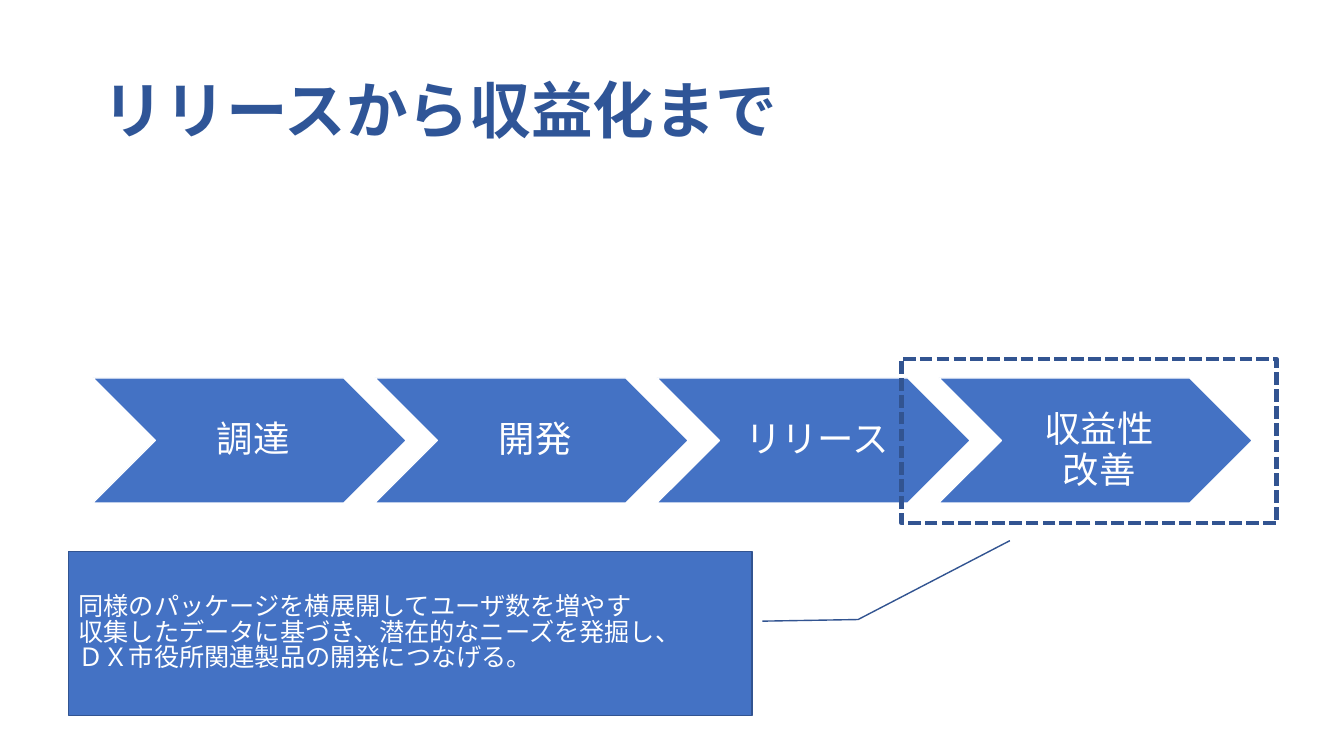
from lxml.etree import SubElement
from pptx import Presentation
from pptx.dml.color import RGBColor
from pptx.enum.dml import MSO_LINE
from pptx.enum.shapes import MSO_SHAPE
from pptx.enum.text import MSO_ANCHOR, PP_ALIGN
from pptx.oxml.ns import qn
from pptx.util import Inches, Pt

FONT = "Noto Sans CJK JP"
WHITE = RGBColor(0xFF, 0xFF, 0xFF)
BLUE = RGBColor(0x44, 0x72, 0xC4)
TITLE_BLUE = RGBColor(0x2F, 0x55, 0x97)
DARK_BLUE = RGBColor(0x32, 0x54, 0x91)


def write_text(text_frame, text, size, color=WHITE, bold=False,
               align=PP_ALIGN.LEFT, line_spacing=None, space_after=0,
               margins=(0.1, 0.05, 0.1, 0.05)):
    """Fill a text frame with one paragraph per line of text."""
    text_frame.word_wrap = True
    text_frame.vertical_anchor = MSO_ANCHOR.MIDDLE
    for side, margin in zip(("left", "top", "right", "bottom"), margins):
        setattr(text_frame, f"margin_{side}", Inches(margin))
    for index, line in enumerate(text.split("\n")):
        paragraph = text_frame.add_paragraph() if index else text_frame.paragraphs[0]
        paragraph.alignment = align
        paragraph.line_spacing = line_spacing
        paragraph.space_after = Pt(space_after)
        run = paragraph.add_run()
        run.text = line
        run.font.name = FONT
        run.font.size = Pt(size)
        run.font.bold = bold
        run.font.color.rgb = color
        # Japanese glyphs take the East Asian typeface
        SubElement(run.font._element, qn("a:ea")).set("typeface", FONT)


class ProcessSlide:
    """Holds the slide and its style."""

    def __init__(self, presentation):
        self.slide = presentation.slides.add_slide(presentation.slide_layouts[5])

    def title(self, text, left, top, width, height):
        title = self.slide.shapes.title
        title.left, title.top = Inches(left), Inches(top)
        title.width, title.height = Inches(width), Inches(height)
        write_text(title.text_frame, text, 44, color=TITLE_BLUE, bold=True,
                   line_spacing=0.9)

    def shape(self, kind, left, top, width, height, fill=None, line=DARK_BLUE,
              line_width=1):
        shape = self.slide.shapes.add_shape(
            kind, Inches(left), Inches(top), Inches(width), Inches(height))
        shape.shadow.inherit = False
        if fill is None:
            shape.fill.background()
        else:
            shape.fill.solid()
            shape.fill.fore_color.rgb = fill
        shape.line.color.rgb = line
        shape.line.width = Pt(line_width)
        return shape

    def step(self, text, left, top, line_spacing=0.9, top_margin=0.04):
        chevron = self.shape(MSO_SHAPE.CHEVRON, left, top, 3.11, 1.24,
                             fill=BLUE, line=WHITE)
        write_text(chevron.text_frame, text, 26, align=PP_ALIGN.CENTER,
                   line_spacing=line_spacing, space_after=9,
                   margins=(0.11, top_margin, 0.04, 0.04))

    def callout(self, text, left, top, width, height, adjustments):
        callout = self.shape(MSO_SHAPE.LINE_CALLOUT_2, left, top, width, height,
                             fill=BLUE)
        for index, value in enumerate(adjustments):
            callout.adjustments[index] = value
        write_text(callout.text_frame, text, 18, line_spacing=0.83)

    def highlight(self, left, top, width, height):
        frame = self.shape(MSO_SHAPE.RECTANGLE, left, top, width, height,
                           line_width=3)
        frame.line.dash_style = MSO_LINE.SQUARE_DOT


def main():
    presentation = Presentation()
    presentation.slide_width = Inches(13.33)
    presentation.slide_height = Inches(7.5)
    page = ProcessSlide(presentation)

    page.title("リリースから収益化まで", 0.92, 0.4, 11.5, 1.45)

    # Process steps
    first_left, pitch, top = 0.92, 2.797, 3.75
    steps = ["調達", "開発", "リリース"]
    for index, name in enumerate(steps):
        page.step(name, first_left + index * pitch, top)
    page.step("収益性\n改善", first_left + len(steps) * pitch, top,
              line_spacing=Pt(20), top_margin=0.35)

    # Explanation of the last step
    page.callout("同様のパッケージを横展開してユーザ数を増やす\n"
                 "収集したデータに基づき、潜在的なニーズを発掘し、\n"
                 "ＤＸ市役所関連製品の開発につなげる。",
                 0.68, 5.47, 6.78, 1.63,
                 (0.425, 1.015, 0.415, 1.155, -0.065, 1.377))
    page.highlight(8.94, 3.56, 3.72, 1.63)

    presentation.save("out.pptx")


if __name__ == "__main__":
    main()
